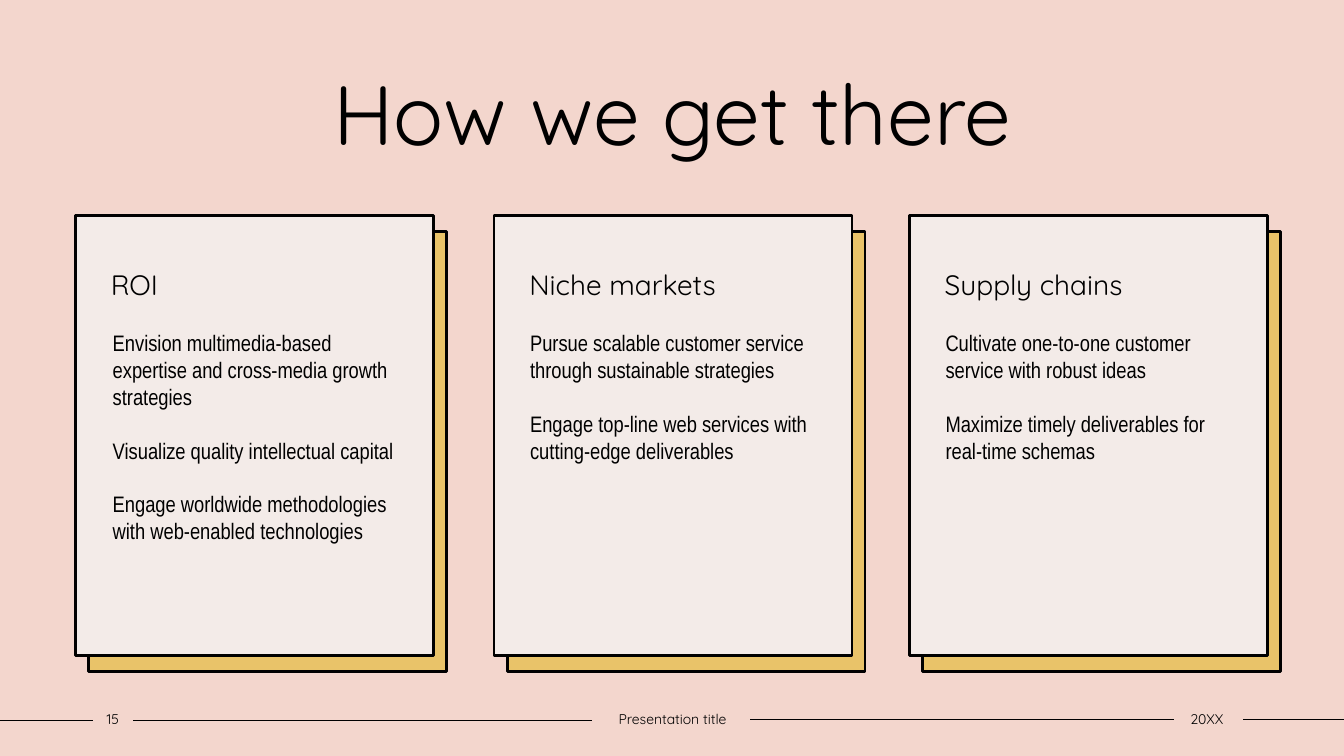
from pptx import Presentation
from pptx.dml.color import RGBColor
from pptx.enum.shapes import MSO_CONNECTOR as Connector, MSO_SHAPE as Shape
from pptx.enum.text import MSO_ANCHOR as Anchor, PP_ALIGN as Align
from pptx.oxml.ns import qn
from pptx.util import Inches, Pt
from lxml import etree

# Content
TITLE = "How we get there"
CARDS = [  # left edge, text left edge, heading, points
    (0.75, 1.02, "ROI", [
        "Envision multimedia-based expertise and cross-media growth strategies",
        "Visualize quality intellectual capital",
        "Engage worldwide methodologies with web-enabled technologies"]),
    (4.9, 5.16, "Niche markets", [
        "Pursue scalable customer service through sustainable strategies",
        "Engage top-line web services with cutting-edge deliverables"]),
    (9.02, 9.28, "Supply chains", [
        "Cultivate one-to-one customer service with robust ideas",
        "Maximize timely deliverables for real-time schemas"]),
]
FOOTERS = [(0.92, 0.4, "15"), (5.87, 1.6, "Presentation title"), (11.62, 0.7, "20XX")]
RULES = [(0, 0.92, 7.15), (1.32, 5.87, 7.15), (7.44, 11.64, 7.14), (12.33, 13.33, 7.14)]

# Look
BLACK, PINK, GOLD, CREAM = "000000", "F3D6CD", "E9C369", "F3EBE8"
HEAD_FONT, BODY_FONT = "Quicksand", "Arial Narrow"
CARD_TOP, CARD_WIDTH, CARD_HEIGHT = 2.14, 3.55, 4.36
SHADE_X, SHADE_Y = 0.13, 0.16
BODY_INSETS = (0.1, 0.05, 0.1, 0.05)


def color(value):
    return RGBColor.from_string(value)


def write(frame, lines, size, font, insets=BODY_INSETS, anchor=Anchor.TOP, **layout):
    sides = ("margin_left", "margin_top", "margin_right", "margin_bottom")
    settings = dict(zip(sides, map(Inches, insets)), word_wrap=True, vertical_anchor=anchor)
    for name, value in settings.items():
        setattr(frame, name, value)
    for index, line in enumerate(lines):
        para = frame.add_paragraph() if index else frame.paragraphs[0]
        for name, value in ({"alignment": Align.LEFT} | layout).items():
            setattr(para, name, value)
        span = para.add_run()
        span.text = line
        for name, value in {"size": Pt(size), "name": font, "bold": False}.items():
            setattr(span.font, name, value)
        span.font.color.rgb = color(BLACK)


def add_panel(page, left, top, fill):
    panel = page.shapes.add_shape(
        Shape.RECTANGLE, *map(Inches, (left, top, CARD_WIDTH, CARD_HEIGHT)))
    panel.shadow.inherit = False
    panel.fill.solid()
    panel.fill.fore_color.rgb = color(fill)
    panel.line.color.rgb = color(BLACK)
    panel.line.width = Pt(2)
    return panel


def add_rule(page, start, end, height):
    rule = page.shapes.add_connector(
        Connector.STRAIGHT, *map(Inches, (start, height, end, height)))
    rule.line.color.rgb = color(BLACK)
    rule.line.width = Pt(1)
    etree.SubElement(rule._element.spPr, qn("a:effectLst"))


def add_text(page, left, top, width, height, lines, size, font, **layout):
    box = page.shapes.add_textbox(*map(Inches, (left, top, width, height)))
    write(box.text_frame, lines, size, font, **layout)


def main():
    deck = Presentation()
    deck.slide_width, deck.slide_height = Inches(13.33), Inches(7.5)
    page = deck.slides.add_slide(deck.slide_layouts[5])
    page.background.fill.solid()
    page.background.fill.fore_color.rgb = color(PINK)

    # Title
    title = page.shapes.title
    place = {"left": 1.25, "top": 0.56, "width": 10.84, "height": 1.11}
    for name, value in place.items():
        setattr(title, name, Inches(value))
    write(title.text_frame, [TITLE], 60, HEAD_FONT, alignment=Align.CENTER)

    # Cards, each over an offset gold panel
    for left, text_left, heading, points in CARDS:
        add_panel(page, left + SHADE_X, CARD_TOP + SHADE_Y, GOLD)
        card = add_panel(page, left, CARD_TOP, CREAM)
        write(card.text_frame, [heading], 20, HEAD_FONT,
              insets=(0.35, 0.55, 0.1, 0.05), line_spacing=0.9)
        add_text(page, text_left, 3.22, 3, 3.05, points, 16, BODY_FONT, space_after=Pt(19))

    # Footer
    for rule in RULES:
        add_rule(page, *rule)
    for left, width, text in FOOTERS:
        add_text(page, left, 7, width, 0.27, [text], 10, HEAD_FONT,
                 insets=(0, 0.05, 0, 0.05), anchor=Anchor.MIDDLE, alignment=Align.CENTER)

    deck.save("out.pptx")


if __name__ == "__main__":
    main()
